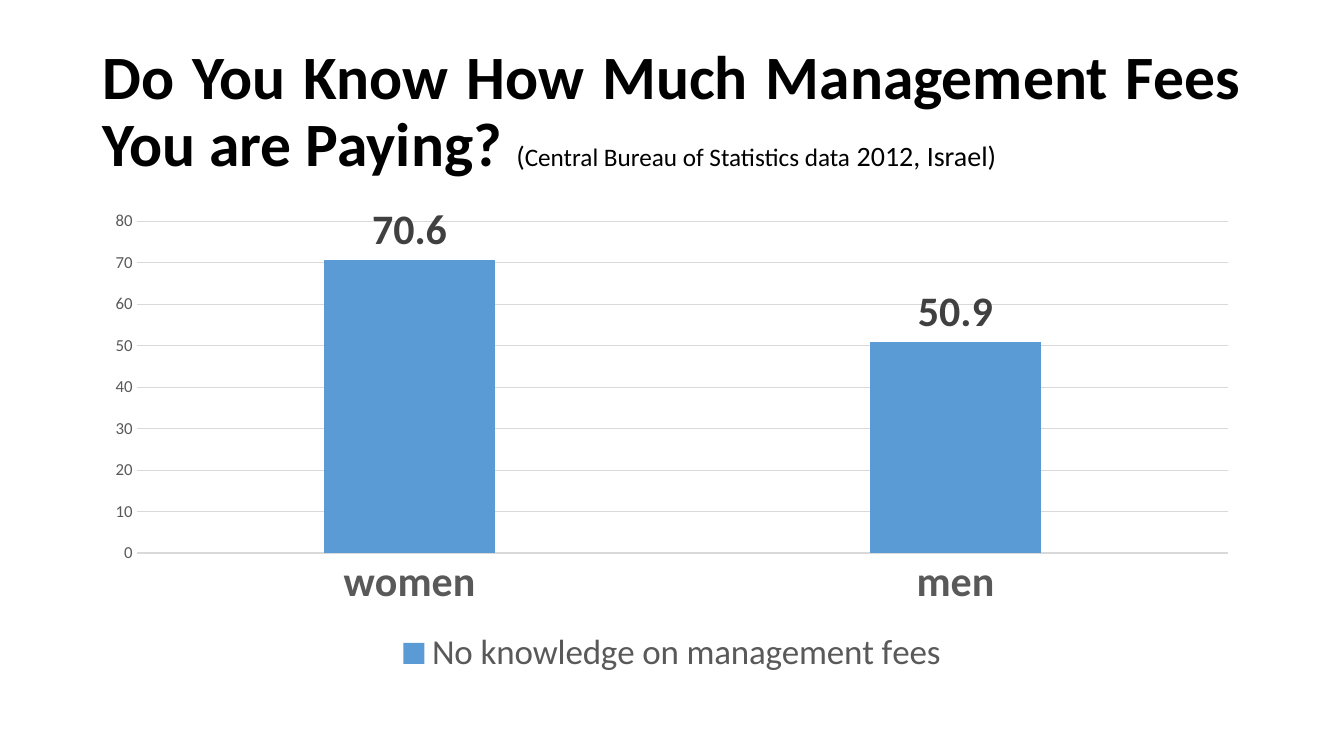
from dataclasses import dataclass

from pptx import Presentation
from pptx.chart.data import CategoryChartData
from pptx.dml.color import RGBColor
from pptx.enum.chart import (XL_CHART_TYPE, XL_LABEL_POSITION,
                             XL_LEGEND_POSITION, XL_TICK_MARK)
from pptx.enum.text import MSO_ANCHOR, PP_ALIGN
from pptx.util import Cm, Pt


@dataclass(frozen=True)
class Theme:
    font: str = "Calibri"
    title_color: str = "000000"
    axis_color: str = "595959"
    label_color: str = "404040"
    grid_color: str = "D9D9D9"
    bar_color: str = "5B9BD5"
    title_size: float = 44
    note_size: float = 20
    source_size: float = 18
    category_size: float = 30
    legend_size: float = 25
    scale_size: float = 12
    grid_width: float = 0.75


class SlideBuilder:
    def __init__(self, page, theme):
        self.page = page
        self.theme = theme

    def style_font(self, font, size, color, bold=False):
        font.name = self.theme.font
        font.size = Pt(size)
        font.bold = bold
        font.color.rgb = RGBColor.from_string(color)

    def style_line(self, line):
        line.color.rgb = RGBColor.from_string(self.theme.grid_color)
        line.width = Pt(self.theme.grid_width)

    def add_title(self, spans, left, top, width, height):
        """Add a justified title; spans holds (text, size, bold) triples."""
        box = self.page.shapes.add_textbox(Cm(left), Cm(top), Cm(width), Cm(height))
        frame = box.text_frame
        frame.word_wrap = True
        frame.vertical_anchor = MSO_ANCHOR.MIDDLE
        para = frame.paragraphs[0]
        para.alignment = PP_ALIGN.JUSTIFY
        para.line_spacing = 0.9
        for text, size, bold in spans:
            span = para.add_run()
            span.text = text
            self.style_font(span.font, size, self.theme.title_color, bold)

    def add_column_chart(self, categories, name, values, left, top, width, height):
        data = CategoryChartData()
        data.categories = categories
        data.add_series(name, values)
        chart = self.page.shapes.add_chart(
            XL_CHART_TYPE.COLUMN_CLUSTERED,
            Cm(left), Cm(top), Cm(width), Cm(height), data).chart
        chart.has_title = False
        self.style_font(chart.font, self.theme.scale_size, self.theme.axis_color)
        self.style_axes(chart)
        self.style_columns(chart.plots[0])
        chart.has_legend = True
        chart.legend.position = XL_LEGEND_POSITION.BOTTOM
        chart.legend.include_in_layout = False
        self.style_font(chart.legend.font, self.theme.legend_size,
                        self.theme.axis_color)

    def style_axes(self, chart):
        theme = self.theme
        for axis, size, bold in ((chart.category_axis, theme.category_size, True),
                                 (chart.value_axis, theme.scale_size, False)):
            axis.major_tick_mark = XL_TICK_MARK.NONE
            axis.minor_tick_mark = XL_TICK_MARK.NONE
            self.style_font(axis.tick_labels.font, size, theme.axis_color, bold)
        self.style_line(chart.category_axis.format.line)
        scale = chart.value_axis
        scale.minimum_scale, scale.maximum_scale, scale.major_unit = 0, 80, 10
        scale.format.line.fill.background()
        self.style_line(scale.major_gridlines.format.line)

    def style_columns(self, plot):
        plot.gap_width = 219
        plot.overlap = -27
        plot.vary_by_categories = False
        columns = plot.series[0]
        columns.format.fill.solid()
        columns.format.fill.fore_color.rgb = RGBColor.from_string(self.theme.bar_color)
        labels = columns.data_labels
        labels.show_value = True
        labels.position = XL_LABEL_POSITION.OUTSIDE_END
        self.style_font(labels.font, self.theme.category_size,
                        self.theme.label_color, True)


def main():
    deck = Presentation()
    deck.slide_width, deck.slide_height = Cm(33.87), Cm(19.05)
    theme = Theme()
    slide = SlideBuilder(deck.slides.add_slide(deck.slide_layouts[6]), theme)
    left, width = 2.33, 29.21
    slide.add_title(
        [("Do You Know How Much Management Fees You are Paying? ",
          theme.title_size, True),
         ("(", theme.note_size, False),
         ("Central Bureau of Statistics data", theme.source_size, False),
         (" 2012, Israel)", theme.note_size, False)],
        left, 1.01, width, 3.68)
    slide.add_column_chart(["women", "men"], "No knowledge on management fees",
                           [70.6, 50.9], left, 5.08, width, 12.09)
    deck.save("out.pptx")


if __name__ == "__main__":
    main()
